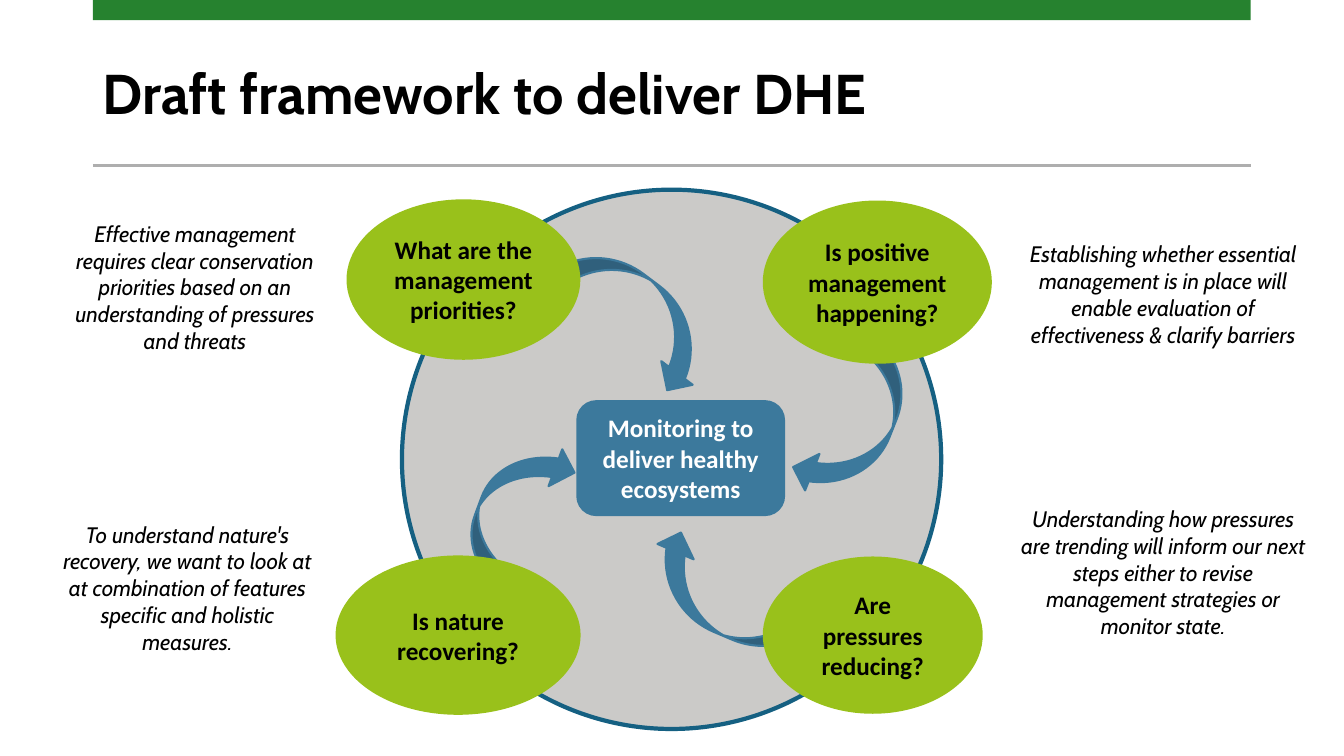
from pptx import Presentation
from pptx.dml.color import RGBColor
from pptx.enum.shapes import MSO_CONNECTOR as Connector, MSO_SHAPE as Shape
from pptx.enum.text import MSO_ANCHOR as Anchor, PP_ALIGN as Align
from pptx.oxml.ns import qn
from pptx.util import Cm, Pt
from lxml import etree

BLUE, LIME, GREEN = "3C799C", "99C11B", "26822F"

QUESTIONS = [
    ((9.2, 4.77, 4.42, 1.98), 111.6, (9.12, 0.3, 5.72, 4.06), 1.5,
     "Is positive management happening?"),
    ((0.89, 7.21, 4.01, 1.98), 290.4, (-1.62, 9.27, 6.07, 3.91), 3,
     "Is nature recovering?"),
    ((6, 9.29, 4.72, 1.98), 203, (9.12, 9.27, 5.49, 3.91), 1.5,
     "Are pressures reducing?"),
    ((3.43, 2.15, 4.72, 1.98), 37, (-1.37, 0.27, 5.84, 3.99), 1.5,
     "What are the management priorities?"),
]

NOTES = [
    ((1.12, 12.73, 7.21, 4.17), 0.13,
     "To understand nature's recovery, we want to look at at combination of "
     "features specific and holistic measures."),
    ((1.32, 5.05, 7.19, 4.37), 0.13,
     "Effective management requires clear conservation priorities based on an "
     "understanding of pressures and threats"),
    ((25.58, 5.41, 7.47, 4.01), 0.13,
     "Establishing whether essential management is in place will enable "
     "evaluation of effectiveness & clarify barriers"),
    ((25.48, 12.47, 7.67, 4.67), 0.9,
     "Understanding how pressures are trending will inform our next steps "
     "either to revise management strategies or monitor state."),
]


def color(value):
    """Turn a hex string into a colour."""
    return RGBColor.from_string(value)


def lengths(box):
    """Turn centimetre values into lengths."""
    return [Cm(value) for value in box]


def inside(box, part):
    """Shift a part by the top left corner of its box."""
    return part[0] + box[0], part[1] + box[1], part[2], part[3]


def write(shape, text, size, font, ink, align=Align.CENTER, bold=False, italic=False):
    """Write one wrapped, vertically centred paragraph and return it."""
    frame = shape.text_frame
    frame.word_wrap = True
    frame.vertical_anchor = Anchor.MIDDLE
    paragraph = frame.paragraphs[0]
    paragraph.alignment = align
    run = paragraph.add_run()
    run.text = text
    run.font.size, run.font.name = Pt(size), font
    run.font.bold, run.font.italic = bold, italic
    run.font.color.rgb = color(ink)
    return paragraph


def add_figure(slide, kind, box, fill, line=None, width=1.5):
    """Add a filled preset shape without shadow."""
    shape = slide.shapes.add_shape(kind, *lengths(box))
    shape.shadow.inherit = False
    shape.fill.solid()
    shape.fill.fore_color.rgb = color(fill)
    if line:
        shape.line.color.rgb = color(line)
        shape.line.width = Pt(width)
    else:
        shape.line.fill.background()
    return shape


def add_header(slide, box):
    """Place the rule, the green bar and the title in the header box."""
    left, top, width, height = box
    rule = slide.shapes.add_connector(
        Connector.STRAIGHT, *lengths((left, top + height, left + width, top + height)))
    rule.line.color.rgb = color("AEAEAE")
    rule.line.width = Pt(1.5)
    etree.SubElement(rule._element.spPr, qn("a:effectLst"))
    add_figure(slide, Shape.RECTANGLE, (left, top, width, 0.51), GREEN)
    title = slide.shapes.add_textbox(*lengths((left, top + 0.94, width, 3)))
    paragraph = write(title, "Draft framework to deliver DHE", 40, "Cabin", "000000",
                      Align.LEFT, bold=True)
    paragraph.line_spacing = 0.9


def add_cycle(slide, box):
    """Place the circle, the hub and the four questions with their arrows."""
    add_figure(slide, Shape.OVAL, box, "CBCAC8", "156082", 3)
    hub = add_figure(slide, Shape.ROUNDED_RECTANGLE,
                     inside(box, (4.42, 5.33, 5.21, 2.87)), BLUE, BLUE)
    write(hub, "Monitoring to deliver healthy ecosystems", 18, "Calibri", "FFFFFF", bold=True)
    for arrow_box, rotation, oval_box, width, question in QUESTIONS:
        arrow = add_figure(slide, Shape.CURVED_DOWN_ARROW, inside(box, arrow_box), BLUE, BLUE)
        arrow.rotation = rotation
        oval = add_figure(slide, Shape.OVAL, inside(box, oval_box), LIME, LIME, width)
        write(oval, question, 18, "Calibri", "000000", bold=True)


def add_note(slide, box, bottom, text):
    """Place an italic note in its box."""
    note = slide.shapes.add_textbox(*lengths(box))
    note.text_frame.margin_bottom = Cm(bottom)
    write(note, text, 16, "Cabin", "000000", italic=True)


def main():
    """Build and save the slide."""
    presentation = Presentation()
    presentation.slide_width, presentation.slide_height = Cm(33.87), Cm(19.05)
    slide = presentation.slides.add_slide(presentation.slide_layouts[6])
    add_header(slide, (2.34, 0, 29.18, 4.17))
    add_cycle(slide, (10.13, 4.78, 13.59, 13.59))
    for box, bottom, text in NOTES:
        add_note(slide, box, bottom, text)
    presentation.save("out.pptx")


if __name__ == "__main__":
    main()
